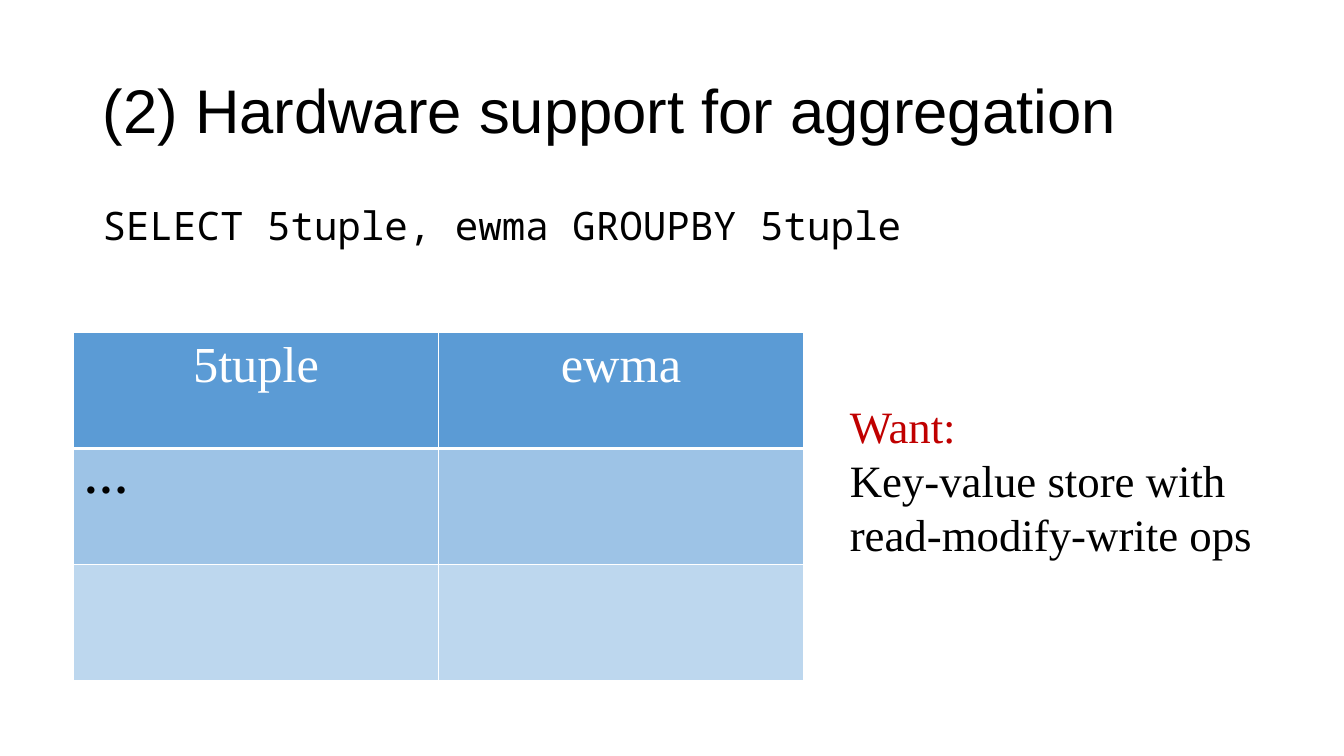
from lxml import etree
from pptx import Presentation
from pptx.dml.color import RGBColor
from pptx.enum.text import MSO_ANCHOR as Anchor, PP_ALIGN as Align
from pptx.oxml.ns import qn
from pptx.util import Inches, Pt

BLACK = RGBColor(0x00, 0x00, 0x00)
WHITE = RGBColor(0xFF, 0xFF, 0xFF)
RED = RGBColor(0xC0, 0x00, 0x00)
HEADER_BLUE = RGBColor(0x5B, 0x9B, 0xD5)
MID_BLUE = RGBColor(0x9D, 0xC3, 0xE6)
PALE_BLUE = RGBColor(0xBD, 0xD7, 0xEE)
SANS, MONO, SERIF = "Arial", "Noto Sans Mono", "Times New Roman"

# Content
TITLE = "(2) Hardware support for aggregation"
QUERY = "SELECT 5tuple, ewma GROUPBY 5tuple"
STORE_ROWS = [("5tuple", "ewma"), ("…", ""), ("", "")]
ROW_FILLS = [HEADER_BLUE, MID_BLUE, PALE_BLUE]
WANT = [("Want:", RED), ("Key-value store with", BLACK),
        ("read-modify-write ops", BLACK)]

# Layout in inches
TITLE_BOX = (0.92, 0.4, 11.5, 1.45)
QUERY_BOX = (0.92, 2, 11.5, 1)
WANT_BOX = (8.33, 3.91, 5, 1.72)
STORE_LEFT, STORE_TOP = 0.73, 3.3
COLUMN_WIDTH, ROW_HEIGHT = 3.62, 1.15


def add_run(paragraph, text, size, font, color, bold=None):
    run = paragraph.add_run()
    run.text = text
    run.font.size = Pt(size)
    run.font.name = font
    run.font.color.rgb = color
    run.font.bold = bold


def add_lines(slide, box, lines, size, font, anchor=Anchor.TOP,
              spacing=None, before=None):
    frame = slide.shapes.add_textbox(*map(Inches, box)).text_frame
    frame.word_wrap = True
    frame.vertical_anchor = anchor
    for i, (text, color) in enumerate(lines):
        paragraph = frame.add_paragraph() if i else frame.paragraphs[0]
        paragraph.line_spacing = spacing
        paragraph.space_before = before
        add_run(paragraph, text, size, font, color)


def add_borders(cell, widths):
    """Draw white borders; widths are points for left, right, top, bottom."""
    properties = cell._tc.get_or_add_tcPr()
    for i, (side, width) in enumerate(zip("LRTB", widths)):
        line = etree.Element(qn(f"a:ln{side}"), w=str(Pt(width)))
        fill = etree.SubElement(line, qn("a:solidFill"))
        etree.SubElement(fill, qn("a:srgbClr"), val=str(WHITE))
        properties.insert(i, line)


def add_store(slide):
    row_count, column_count = len(STORE_ROWS), len(STORE_ROWS[0])
    store = slide.shapes.add_table(
        row_count, column_count, Inches(STORE_LEFT), Inches(STORE_TOP),
        Inches(COLUMN_WIDTH * column_count),
        Inches(ROW_HEIGHT * row_count)).table
    for r, (values, color) in enumerate(zip(STORE_ROWS, ROW_FILLS)):
        store.rows[r].height = Inches(ROW_HEIGHT)
        for c, value in enumerate(values):
            cell = store.cell(r, c)
            cell.fill.solid()
            cell.fill.fore_color.rgb = color
            add_borders(cell, (1, 1, 3 if r == 1 else 1, 3 if r == 0 else 1))
            paragraph = cell.text_frame.paragraphs[0]
            if r == 0:
                paragraph.alignment = Align.CENTER
                add_run(paragraph, value, 36, SERIF, WHITE, bold=False)
            elif value:
                add_run(paragraph, value, 32, SERIF, BLACK, bold=True)


def main():
    deck = Presentation()
    deck.slide_width, deck.slide_height = Inches(13.33), Inches(7.5)
    slide = deck.slides.add_slide(deck.slide_layouts[6])

    # Title and query
    add_lines(slide, TITLE_BOX, [(TITLE, BLACK)], 44, SANS,
              anchor=Anchor.MIDDLE, spacing=0.9)
    add_lines(slide, QUERY_BOX, [(QUERY, BLACK)], 28, MONO,
              spacing=0.9, before=Pt(10))

    # Key-value store and what it should do
    add_store(slide)
    add_lines(slide, WANT_BOX, WANT, 32, SERIF)

    deck.save("out.pptx")


if __name__ == "__main__":
    main()
